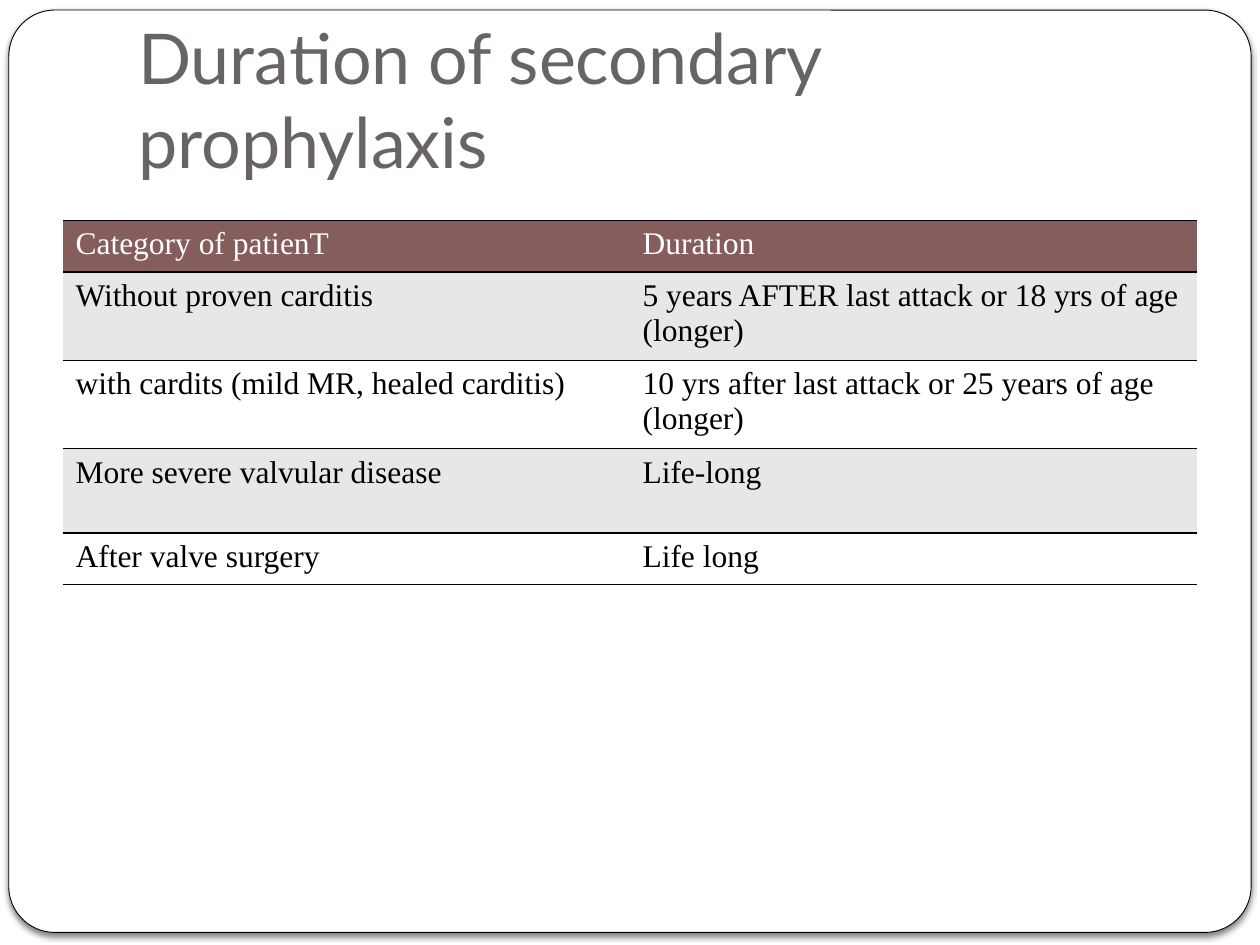
from lxml import etree
from pptx import Presentation
from pptx import util as u
from pptx.dml.color import RGBColor
from pptx.enum import shapes, text
from pptx.oxml import parse_xml
from pptx.oxml.ns import nsdecls, qn


def color(value):
    return RGBColor.from_string(value)


def add_border(cell, side, fill):
    properties = cell._tc.get_or_add_tcPr()
    line = etree.SubElement(properties, qn(f"a:ln{side}"), w=str(u.Pt(0.96)))
    line.append(parse_xml(f"<a:{fill} {nsdecls('a')}/>"))
    return line[0]


deck = Presentation()
deck.slide_width = u.Inches(10)
deck.slide_height = u.Inches(7.5)
page = deck.slides.add_slide(deck.slide_layouts[6])

frame = page.shapes.add_shape(
    shapes.MSO_SHAPE.ROUNDED_RECTANGLE,
    u.Inches(0.07), u.Inches(0.08), u.Inches(9.86), u.Inches(7.32),
)
frame.adjustments[0] = 0.05
frame.fill.solid()
frame.fill.fore_color.rgb = color("FFFFFF")
frame.line.color.rgb = color("000000")
frame.line.width = u.Pt(0.5)
frame.shadow.inherit = False
frame._element.spPr.find(qn("a:effectLst")).append(parse_xml(
    f'<a:outerShdw {nsdecls("a")} blurRad="{u.Pt(3)}" dist="{u.Pt(2)}" dir="5400000" rotWithShape="0">'
    '<a:srgbClr val="000000"><a:alpha val="50000"/></a:srgbClr></a:outerShdw>'
))

title = page.shapes.add_textbox(u.Inches(1), u.Inches(0.3), u.Inches(8.5), u.Inches(1.25))
title_text = title.text_frame
title_text.word_wrap = True
title_text.vertical_anchor = text.MSO_ANCHOR.BOTTOM
title_text.margin_bottom = u.Inches(0.1)
para = title_text.paragraphs[0]
para.text = "Duration of secondary prophylaxis"
para.font.name = "Lato"
para.font.size = u.Pt(40)
para.font.color.rgb = color("696464")

rows = [
    ("Category of patienT", "Duration", 0.41),
    ("Without proven carditis", "5 years AFTER last attack or 18 yrs of age (longer)", 0.67),
    ("with cardits (mild MR, healed carditis)", "10 yrs after last attack or 25 years of age (longer)", 0.67),
    ("More severe valvular disease", "Life-long", 0.67),
    ("After valve surgery", "Life long", 0.41),
]
table = page.shapes.add_table(
    len(rows), 2, u.Inches(0.5), u.Inches(1.75), u.Inches(9), u.Inches(2.83)
).table
for row_index, (category, duration, height) in enumerate(rows):
    table.rows[row_index].height = u.Inches(height)
    if row_index == 0:
        background, ink = "855D5D", "FFFFFF"
    else:
        background, ink = ("E7E7E7" if row_index % 2 else "FFFFFF"), "000000"
    for column_index, wording in enumerate((category, duration)):
        cell = table.cell(row_index, column_index)
        for side in "LR":
            add_border(cell, side, "noFill")
        for side in "TB":
            etree.SubElement(add_border(cell, side, "solidFill"), qn("a:srgbClr"), val="000000")
        cell.fill.solid()
        cell.fill.fore_color.rgb = color(background)
        para = cell.text_frame.paragraphs[0]
        para.text = wording
        para.font.name = "Times New Roman"
        para.font.size = u.Pt(18)
        para.font.bold = False
        para.font.color.rgb = color(ink)

deck.save("out.pptx")
